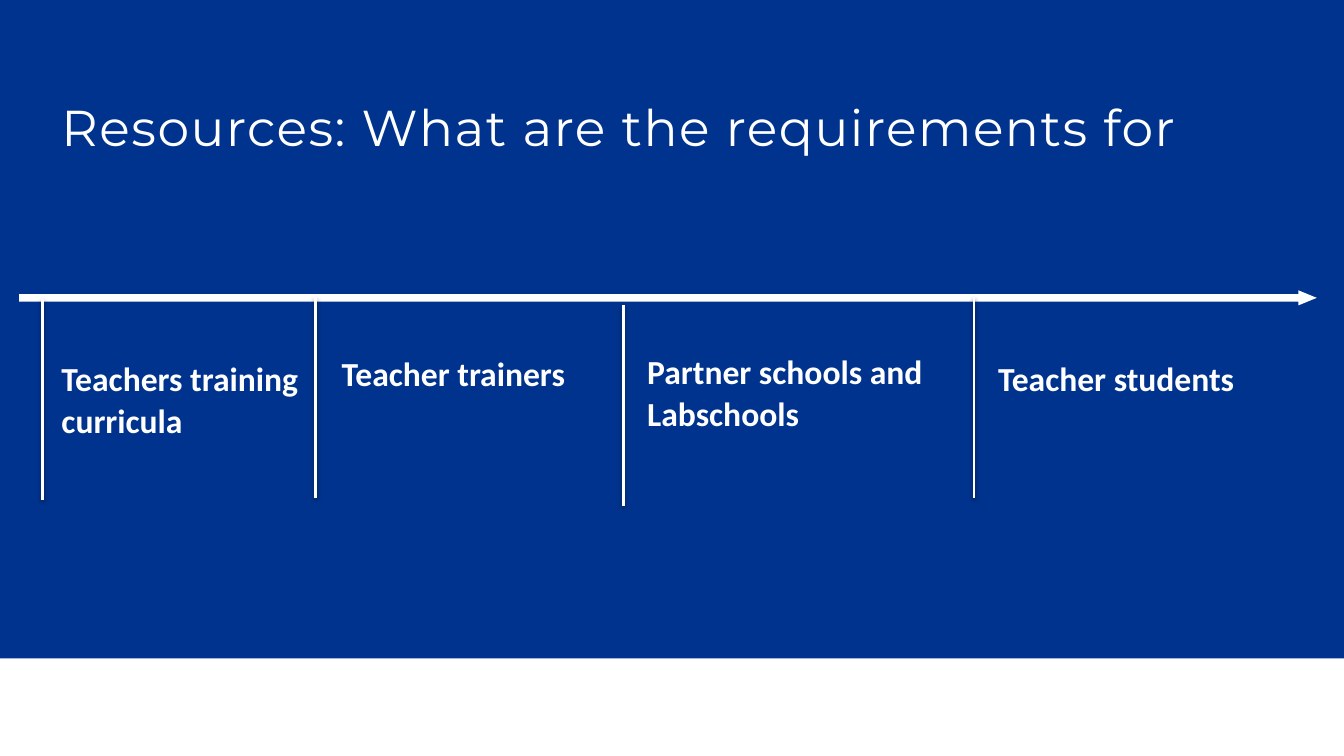
import pptx
import pptx.dml.color
import pptx.enum.shapes
import pptx.enum.text
import pptx.oxml
import pptx.oxml.ns
import pptx.util

BLUE = pptx.dml.color.RGBColor(0x00, 0x33, 0x8D)
WHITE = pptx.dml.color.RGBColor(0xFF, 0xFF, 0xFF)
WIDTH, HEIGHT = pptx.util.Inches(13.33), pptx.util.Inches(7.5)
UNIT = pptx.util.Inches(1)  # one grid column or row
SHADOW = (
    f'<a:effectLst {pptx.oxml.ns.nsdecls("a")}>'
    '<a:outerShdw blurRad="39370" dist="20320" dir="5400000" rotWithShape="0">'
    '<a:srgbClr val="000000"><a:alpha val="38000"/></a:srgbClr>'
    '</a:outerShdw></a:effectLst>'
)


def place(shape, left, top, width, height):
    shape.left, shape.top = int(left * UNIT), int(top * UNIT)
    shape.width, shape.height = int(width * UNIT), int(height * UNIT)


def write(frame, lines, size, font_name, bold):
    frame.word_wrap = True
    frame.auto_size = pptx.enum.text.MSO_AUTO_SIZE.NONE
    for number, line in enumerate(lines):
        para = frame.paragraphs[0] if number == 0 else frame.add_paragraph()
        properties = para._p.get_or_add_pPr()
        properties.set("marL", "0")
        properties.set("indent", "0")
        para.alignment = pptx.enum.text.PP_ALIGN.LEFT
        para.line_spacing = 0.87
        para.space_before = pptx.util.Pt(2.4 if number else 0)
        para.space_after = pptx.util.Pt(2.4)
        properties.append(
            pptx.oxml.parse_xml(f'<a:buNone {pptx.oxml.ns.nsdecls("a")}/>'))
        span = para.add_run()
        span.text = line
        span.font.size = pptx.util.Pt(size)
        span.font.name = font_name
        span.font.bold = bold
        span.font.color.rgb = WHITE


deck = pptx.Presentation()
deck.slide_width, deck.slide_height = WIDTH, HEIGHT
page = deck.slides.add_slide(deck.slide_layouts[1])

# Blue panel behind everything
panel = page.shapes.add_shape(
    pptx.enum.shapes.MSO_SHAPE.RECTANGLE, 0, 0, WIDTH, int(HEIGHT * 0.871))
panel.shadow.inherit = False
panel.fill.solid()
panel.fill.fore_color.rgb = BLUE
panel.line.fill.background()
page.shapes._spTree.insert(2, panel._element)

# Title
title = page.shapes.title
place(title, 0.51, 0.91, 12.48, 0.7)
write(title.text_frame, ["Resources: What are the requirements for"],
      36, "Montserrat", False)
title.text_frame.vertical_anchor = pptx.enum.text.MSO_ANCHOR.BOTTOM
title.text_frame.paragraphs[0].runs[0].font._element.set("spc", "110")

# Timeline arrow
arrow = page.shapes.add_shape(
    pptx.enum.shapes.MSO_SHAPE.RIGHT_ARROW, 0, 0, UNIT, UNIT)
place(arrow, 0.19, 2.88, 12.87, 0.15)
arrow.adjustments[0], arrow.adjustments[1] = 0.5, 1.22
arrow.shadow.inherit = False
arrow.fill.solid()
arrow.fill.fore_color.rgb = WHITE
arrow.line.fill.background()

# Stages: divider x and top, label left, top and width, label lines
stages = [
    (0.42, 2.97, 0.51, 3.56, 2.98, ["Teachers training", "curricula"]),
    (3.13, 2.95, 3.29, 3.51, 2.90, ["Teacher trainers"]),
    (6.18, 3.03, 6.32, 3.49, 3.14, ["Partner schools and", "Labschools"]),
    (9.66, 2.95, 9.80, 3.56, 3.25, ["Teacher students"]),
]
for number, (x, top, left, label_top, width, lines) in enumerate(stages):
    divider = page.shapes.add_connector(
        pptx.enum.shapes.MSO_CONNECTOR.STRAIGHT,
        int(x * UNIT), int(top * UNIT), int(x * UNIT), int((top + 1.99) * UNIT))
    divider.line.color.rgb = WHITE
    divider.line.width = pptx.util.Pt(2)
    divider._element.spPr.append(pptx.oxml.parse_xml(SHADOW))

    if number == 0:
        label = page.placeholders[1]
    else:
        label = page.shapes.add_textbox(0, 0, UNIT, UNIT)
    place(label, left, label_top, width, 0.45 * len(lines))
    write(label.text_frame, lines, 24, "Calibri", True)

deck.save("out.pptx")
